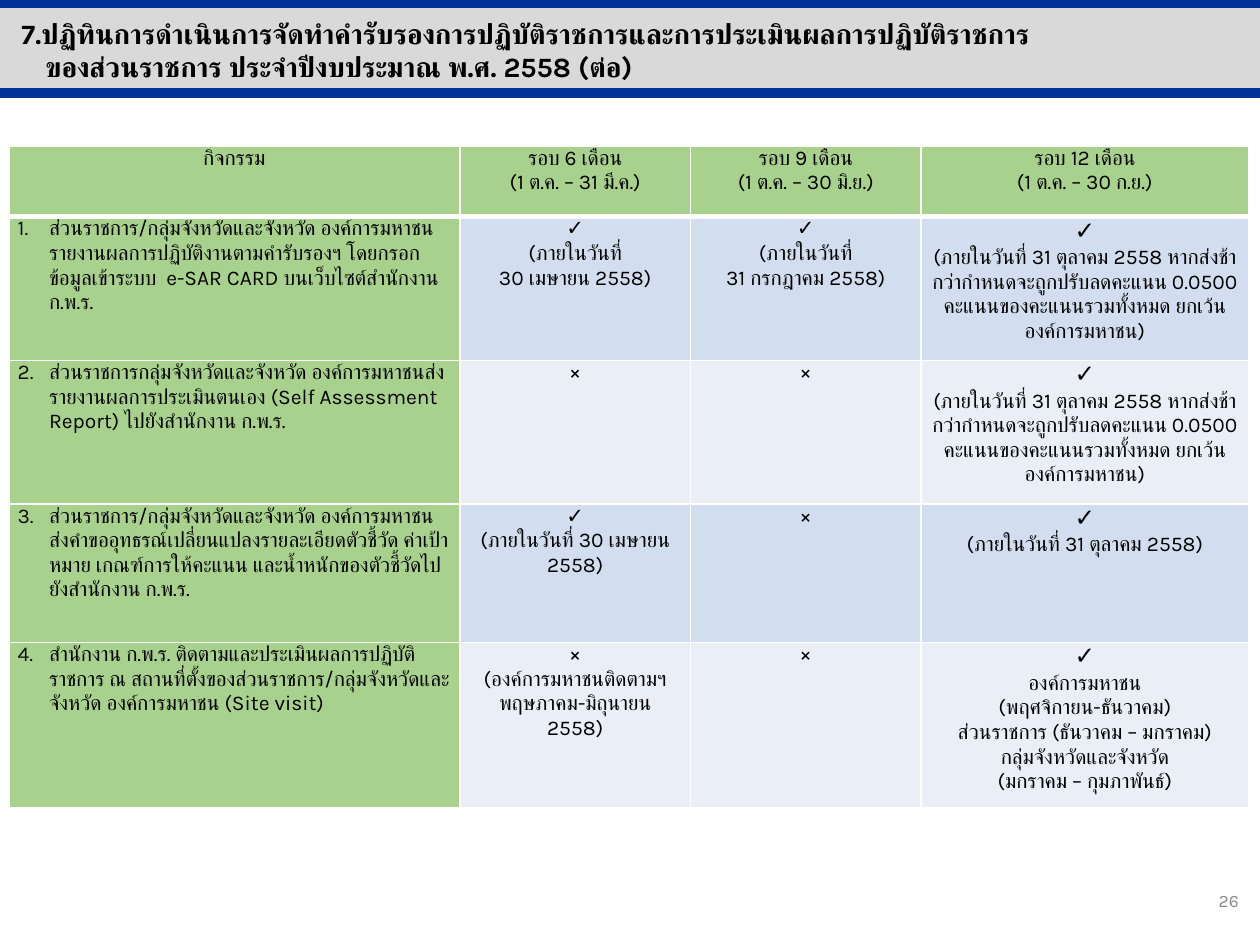
from dataclasses import dataclass

from lxml.etree import SubElement
from pptx import Presentation
from pptx.dml.color import RGBColor
from pptx.enum.shapes import MSO_CONNECTOR as Connector, MSO_SHAPE as Shape
from pptx.enum.text import MSO_ANCHOR as Anchor, MSO_AUTO_SIZE as AutoSize, PP_ALIGN as Align
from pptx.oxml.ns import qn
from pptx.util import Inches, Pt

FONT = "Karla"
GREEN = "A9D18E"
BLUE = "003399"
BANDS = ("D2DEEF", "EAEFF7")
YES, NO = "✓", "×"
COLUMN_WIDTHS = (3.58, 1.83, 1.83, 2.6)
ROW_HEIGHTS = (0.56, 1.14, 1.14, 1.1, 1.31)


@dataclass
class Activity:
    name: str
    six_months: list[str]
    nine_months: list[str]
    twelve_months: list[str]


TITLE = (
    "7.ปฏิทินการดำเนินการจัดทำคำรับรองการปฏิบัติราชการและการประเมินผลการปฏิบัติราชการ",
    "ของส่วนราชการ ประจำปีงบประมาณ พ.ศ. 2558 (ต่อ)",
)
HEADERS = (
    ["กิจกรรม"],
    ["รอบ 6 เดือน", "(1 ต.ค. – 31 มี.ค.)"],
    ["รอบ 9 เดือน", "(1 ต.ค. – 30 มิ.ย.)"],
    ["รอบ 12 เดือน", "(1 ต.ค. – 30 ก.ย.)"],
)
LATE_PENALTY = (
    "(ภายในวันที่ 31 ตุลาคม 2558 หากส่งช้ากว่ากำหนดจะถูกปรับลดคะแนน 0.0500 "
    "คะแนนของคะแนนรวมทั้งหมด ยกเว้นองค์การมหาชน)"
)
ACTIVITIES = (
    Activity(
        "ส่วนราชการ/กลุ่มจังหวัดและจังหวัด องค์การมหาชนรายงานผลการปฏิบัติงานตามคำรับรองฯ "
        "โดยกรอกข้อมูลเข้าระบบ  e-SAR CARD บนเว็บไซต์สำนักงาน ก.พ.ร.",
        [YES, "(ภายในวันที่", "30 เมษายน 2558)"],
        [YES, "(ภายในวันที่", "31 กรกฎาคม 2558)"],
        [YES, LATE_PENALTY],
    ),
    Activity(
        "ส่วนราชการกลุ่มจังหวัดและจังหวัด องค์การมหาชนส่งรายงานผลการประเมินตนเอง "
        "(Self Assessment Report) ไปยังสำนักงาน ก.พ.ร.",
        [NO],
        [NO],
        [YES, LATE_PENALTY],
    ),
    Activity(
        "ส่วนราชการ/กลุ่มจังหวัดและจังหวัด องค์การมหาชนส่งคำขออุทธรณ์เปลี่ยนแปลงรายละเอียดตัวชี้วัด "
        "ค่าเป้าหมาย เกณฑ์การให้คะแนน และน้ำหนักของตัวชี้วัดไปยังสำนักงาน ก.พ.ร.",
        [YES, "(ภายในวันที่ 30 เมษายน 2558)"],
        [NO],
        [YES, "(ภายในวันที่ 31 ตุลาคม 2558)"],
    ),
    Activity(
        "สำนักงาน ก.พ.ร. ติดตามและประเมินผลการปฏิบัติราชการ ณ "
        "สถานที่ตั้งของส่วนราชการ/กลุ่มจังหวัดและจังหวัด องค์การมหาชน (Site visit)",
        [NO, "(องค์การมหาชนติดตามฯ พฤษภาคม-มิถุนายน 2558)"],
        [NO],
        [
            YES,
            "องค์การมหาชน",
            "(พฤศจิกายน-ธันวาคม)",
            "ส่วนราชการ (ธันวาคม – มกราคม)",
            "กลุ่มจังหวัดและจังหวัด",
            "(มกราคม – กุมภาพันธ์)",
        ],
    ),
)


def color(value: str) -> RGBColor:
    return RGBColor.from_string(value)


def style_paragraph(paragraph, size: float, align=Align.LEFT, fill="000000", bold=False) -> None:
    paragraph.alignment = align
    font = paragraph.font
    font.name = FONT
    font.size = Pt(size)
    font.bold = bold
    font.color.rgb = color(fill)
    SubElement(paragraph._p.pPr.find(qn("a:defRPr")), qn("a:cs"), typeface=FONT)


def indent(paragraph, left: float, first: float = 0) -> None:
    properties = paragraph._p.get_or_add_pPr()
    properties.set("marL", str(Inches(left)))
    properties.set("indent", str(Inches(first)))


def number_paragraph(paragraph, number: int) -> None:
    indent(paragraph, 0.25, -0.25)
    properties = paragraph._p.get_or_add_pPr()
    bullet_color = SubElement(properties, qn("a:buClr"))
    SubElement(bullet_color, qn("a:srgbClr"), val="0D0D0D")
    SubElement(properties, qn("a:buAutoNum"), type="arabicPeriod", startAt=str(number))


def format_cell(cell, fill: str, side_margin: float, bottom_width: float = 1) -> None:
    cell.margin_left = cell.margin_right = Inches(side_margin)
    cell.margin_top = cell.margin_bottom = 0
    cell.vertical_anchor = Anchor.TOP
    properties = cell._tc.get_or_add_tcPr()
    for side, width in (("L", 1), ("R", 1), ("T", 1), ("B", bottom_width)):
        border = SubElement(properties, qn(f"a:ln{side}"), w=str(Pt(width)))
        SubElement(SubElement(border, qn("a:solidFill")), qn("a:srgbClr"), val="FFFFFF")
    cell.fill.solid()
    cell.fill.fore_color.rgb = color(fill)


def write_centered(cell, lines: list[str], mark_size: float = 12) -> None:
    cell.text = "\n".join(lines)
    for paragraph, line in zip(cell.text_frame.paragraphs, lines):
        style_paragraph(paragraph, mark_size if line == YES else 12, Align.CENTER)


def add_title_band(slide) -> None:
    band = slide.shapes.add_shape(Shape.RECTANGLE, 0, Inches(0.05), Inches(10), Inches(0.68))
    band.shadow.inherit = False
    band.fill.solid()
    band.fill.fore_color.rgb = color("D9D9D9")
    band.line.fill.background()
    for top in (0.74, 0.02):
        rule = slide.shapes.add_connector(
            Connector.STRAIGHT, 0, Inches(top), Inches(10), Inches(top)
        )
        rule.line.color.rgb = color(BLUE)
        rule.line.width = Pt(6)
        SubElement(rule._element.spPr, qn("a:effectLst"))


def add_title(slide) -> None:
    title = slide.shapes.title
    slide.shapes._spTree.append(title._element)
    title.left, title.top = Inches(0.07), Inches(0.08)
    title.width, title.height = Inches(9.67), Inches(0.64)
    frame = title.text_frame
    frame.text = "\n".join(TITLE)
    frame.word_wrap = True
    frame.auto_size = AutoSize.NONE
    frame.vertical_anchor = Anchor.TOP
    for paragraph in frame.paragraphs:
        style_paragraph(paragraph, 16, bold=True)
    indent(frame.paragraphs[1], 0.19)


def add_calendar(slide) -> None:
    table = slide.shapes.add_table(
        len(ROW_HEIGHTS), len(COLUMN_WIDTHS), Inches(0.07), Inches(1.16),
        Inches(sum(COLUMN_WIDTHS)), Inches(sum(ROW_HEIGHTS)),
    ).table
    for column, width in zip(table.columns, COLUMN_WIDTHS):
        column.width = Inches(width)
    for row, height in zip(table.rows, ROW_HEIGHTS):
        row.height = Inches(height)
    for index, lines in enumerate(HEADERS):
        cell = table.cell(0, index)
        format_cell(cell, GREEN, 0.05, bottom_width=3)
        write_centered(cell, lines)
    for number, activity in enumerate(ACTIVITIES, 1):
        name_cell = table.cell(number, 0)
        format_cell(name_cell, GREEN, 0.07)
        name_cell.text = activity.name
        paragraph = name_cell.text_frame.paragraphs[0]
        number_paragraph(paragraph, number)
        style_paragraph(paragraph, 12)
        rounds = (activity.six_months, activity.nine_months, activity.twelve_months)
        for index, lines in enumerate(rounds, 1):
            cell = table.cell(number, index)
            format_cell(cell, BANDS[(number - 1) % 2], 0.07)
            write_centered(cell, lines, mark_size=14 if index == 3 else 12)


def add_page_number(slide) -> None:
    box = slide.shapes.add_textbox(Inches(7.68), Inches(6.95), Inches(2.25), Inches(0.4))
    frame = box.text_frame
    frame.word_wrap = True
    frame.vertical_anchor = Anchor.MIDDLE
    frame.text = "26"
    style_paragraph(frame.paragraphs[0], 10, Align.RIGHT, "8C8C8C")


def main() -> None:
    presentation = Presentation()
    presentation.slide_width, presentation.slide_height = Inches(10), Inches(7.5)
    slide = presentation.slides.add_slide(presentation.slide_layouts[5])
    add_title_band(slide)
    add_page_number(slide)
    add_calendar(slide)
    add_title(slide)
    presentation.save("out.pptx")


if __name__ == "__main__":
    main()
